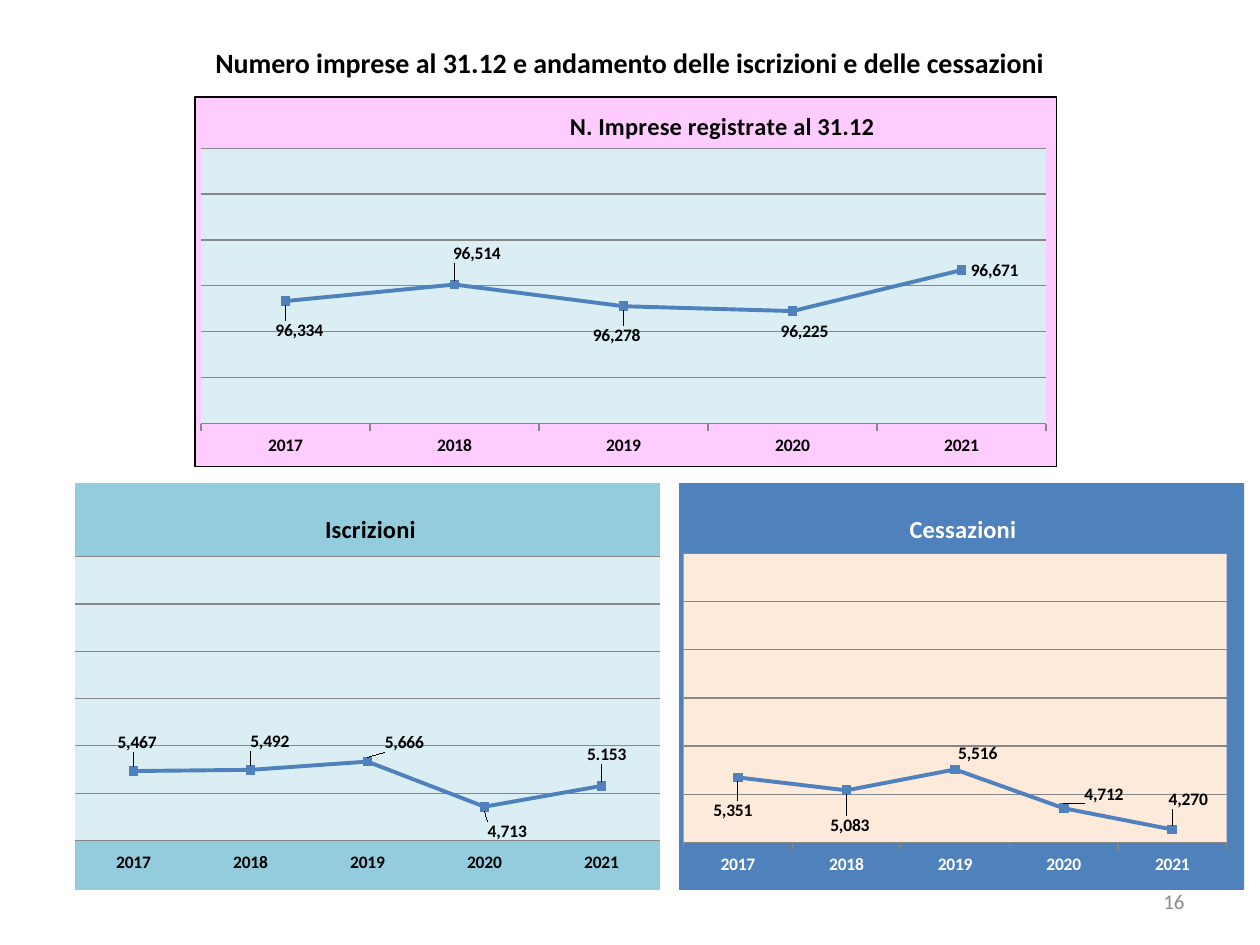
from dataclasses import dataclass

from lxml.etree import SubElement
from pptx import Presentation
from pptx.chart.data import CategoryChartData
from pptx.dml.color import RGBColor
from pptx.enum.chart import XL_CHART_TYPE, XL_LABEL_POSITION, XL_MARKER_STYLE, XL_TICK_LABEL_POSITION, XL_TICK_MARK
from pptx.enum.text import MSO_ANCHOR, PP_ALIGN
from pptx.oxml import parse_xml
from pptx.oxml.ns import nsdecls, qn
from pptx.util import Pt

BLACK = RGBColor(0x00, 0x00, 0x00)
WHITE = RGBColor(0xFF, 0xFF, 0xFF)
GREY = RGBColor(0x8C, 0x8C, 0x8C)
GRID = RGBColor(0x87, 0x87, 0x87)
BLUE = RGBColor(0x4F, 0x81, 0xBD)
PINK = RGBColor(0xFF, 0xCC, 0xFF)
TEAL = RGBColor(0x93, 0xCD, 0xDD)
PALE_BLUE = RGBColor(0xDB, 0xEE, 0xF4)
PEACH = RGBColor(0xFD, 0xEA, 0xDA)

ABOVE, BELOW, RIGHT = XL_LABEL_POSITION.ABOVE, XL_LABEL_POSITION.BELOW, XL_LABEL_POSITION.RIGHT
YEARS = ["2017", "2018", "2019", "2020", "2021"]
NUMBER_FORMAT = "#,##0"


@dataclass
class TrendChart:
    title: str
    series_name: str
    box: tuple
    values: tuple
    scale: tuple
    title_place: tuple
    plot_place: tuple
    labels: tuple
    fill: RGBColor
    plot_fill: RGBColor
    text_color: RGBColor = BLACK
    border: RGBColor | None = None
    tick: XL_TICK_MARK = XL_TICK_MARK.OUTSIDE
    kind: XL_CHART_TYPE = XL_CHART_TYPE.LINE_MARKERS


def manual_layout(**settings):
    layout = parse_xml(f"<c:layout {nsdecls('c')}/>")
    manual = SubElement(layout, qn("c:manualLayout"))
    for name, value in settings.items():
        SubElement(manual, qn(f"c:{name}")).set("val", str(value))
    return layout


def area_style(fill, border=None):
    line = f'<a:solidFill><a:srgbClr val="{border}"/></a:solidFill>' if border else "<a:noFill/>"
    return parse_xml(
        f"<c:spPr {nsdecls('c', 'a')}>"
        f'<a:solidFill><a:srgbClr val="{fill}"/></a:solidFill>'
        f'<a:ln w="{Pt(0.75)}">{line}</a:ln></c:spPr>'
    )


def remove_layout(element):
    for layout in element.findall(qn("c:layout")):
        element.remove(layout)


class SlideBuilder:
    font_name = "Calibri"

    def __init__(self, slide):
        self.slide = slide

    def style_font(self, font, size, color, bold=False):
        font.name = self.font_name
        font.size = Pt(size)
        font.bold = bold
        font.color.rgb = color

    def add_text(self, box, text, size, color, alignment, bold=False):
        shape = self.slide.shapes.add_textbox(*map(Pt, box))
        frame = shape.text_frame
        frame.word_wrap = True
        frame.vertical_anchor = MSO_ANCHOR.MIDDLE
        paragraph = frame.paragraphs[0]
        paragraph.alignment = alignment
        run = paragraph.add_run()
        run.text = text
        self.style_font(run.font, size, color, bold)

    def add_trend(self, trend):
        data = CategoryChartData(number_format=NUMBER_FORMAT)
        data.categories = YEARS
        data.add_series(trend.series_name, trend.values)
        chart = self.slide.shapes.add_chart(trend.kind, *map(Pt, trend.box), data).chart
        self.style_font(chart.font, 10, BLACK)
        chart.has_legend = False
        self.style_title(chart, trend)
        self.style_areas(chart, trend)
        self.style_axes(chart, trend)
        self.style_series(chart.plots[0].series[0], trend)

    def style_title(self, chart, trend):
        chart.has_title = True
        title = chart.chart_title
        title.include_in_layout = False
        run = title.text_frame.paragraphs[0].add_run()
        run.text = trend.title
        self.style_font(run.font, 14, trend.text_color, True)
        element = title._element
        remove_layout(element)
        left, top = trend.title_place
        element.find(qn("c:tx")).addnext(manual_layout(xMode="edge", yMode="edge", x=left, y=top))

    def style_areas(self, chart, trend):
        chart_element = chart._chartSpace.find(qn("c:chart"))
        chart_element.addnext(area_style(trend.fill, trend.border))
        plot_area = chart_element.find(qn("c:plotArea"))
        remove_layout(plot_area)
        left, top, width, height = trend.plot_place
        plot_area.insert(0, manual_layout(
            layoutTarget="inner", xMode="edge", yMode="edge", x=left, y=top, w=width, h=height))
        plot_area.append(area_style(trend.plot_fill))

    def style_axes(self, chart, trend):
        axis = chart.value_axis
        axis.minimum_scale, axis.maximum_scale, axis.major_unit = trend.scale
        axis.has_major_gridlines = True
        axis.visible = False
        years = chart.category_axis
        years.major_tick_mark = trend.tick
        years.tick_label_position = XL_TICK_LABEL_POSITION.LOW
        self.style_font(years.tick_labels.font, 10, trend.text_color, True)
        for line in (axis.major_gridlines.format.line, years.format.line):
            line.color.rgb = GRID
            line.width = Pt(0.75)

    def style_series(self, series, trend):
        series.smooth = False
        series.format.line.color.rgb = BLUE
        series.format.line.width = Pt(2.25)
        series.marker.style = XL_MARKER_STYLE.SQUARE
        series.marker.size = 5
        series.marker.format.fill.solid()
        series.marker.format.fill.fore_color.rgb = BLUE
        series.marker.format.line.color.rgb = BLUE
        labels = series.data_labels
        labels.show_value = True
        labels.number_format = NUMBER_FORMAT
        labels.number_format_is_linked = False
        self.style_font(labels.font, 10, BLACK, True)
        for index, (position, _, _, *custom) in enumerate(trend.labels):
            label = series.points[index].data_label
            self.style_font(label.font, 10, BLACK, True)
            if custom:
                run = label.text_frame.paragraphs[0].add_run()
                run.text = custom[0]
                self.style_font(run.font, 10, BLACK, True)
            label.position = position
        width, height = trend.box[2:]
        for element, (_, right, down, *_) in zip(series._element.iter(qn("c:dLbl")), trend.labels):
            remove_layout(element)
            element.insert(1, manual_layout(x=round(right / width, 3), y=round(down / height, 3)))


TRENDS = [
    TrendChart(
        "N. Imprese registrate al 31.12", "Series 1", (111, 55, 493, 212),
        (96334, 96514, 96278, 96225, 96671), (95000, 98000, 500),
        (0.43, 0.02), (0.007, 0.139, 0.981, 0.745),
        ((BELOW, 8, 6), (ABOVE, 13, -7), (BELOW, -4, 6), (BELOW, 7, 1), (RIGHT, 0, 0)),
        PINK, PALE_BLUE, border=BLACK, kind=XL_CHART_TYPE.LINE_MARKERS_STACKED),
    TrendChart(
        "Iscrizioni", "Iscrizioni", (42.5, 276, 335, 232.5),
        (5467, 5492, 5666, 4713, 5153), (4000, 10000, 1000),
        (0.42, 0.06), (0, 0.181, 1, 0.698),
        ((ABOVE, 2, -5), (ABOVE, 11, -5), (ABOVE, 21, 0), (BELOW, 13, 3), (ABOVE, 3, -7, "5.153")),
        TEAL, PALE_BLUE, tick=XL_TICK_MARK.NONE),
    TrendChart(
        "Cessazioni", "Cessazioni", (388, 276, 323, 232.5),
        (5351, 5083, 5516, 4712, 4270), (4000, 10000, 1000),
        (0.4, 0.06), (0.008, 0.173, 0.961, 0.711),
        ((BELOW, -3, 8), (BELOW, 2, 9), (ABOVE, 13, 2), (ABOVE, 23, 3), (ABOVE, 9, -6)),
        BLUE, PEACH, text_color=WHITE),
]


def main():
    presentation = Presentation()
    presentation.slide_width, presentation.slide_height = Pt(720), Pt(540)
    builder = SlideBuilder(presentation.slides.add_slide(presentation.slide_layouts[6]))
    builder.add_text((36, 22, 648, 27), "Numero imprese al 31.12 e andamento delle iscrizioni e delle cessazioni",
                     16, BLACK, PP_ALIGN.CENTER, True)
    builder.add_text((516, 500.5, 168, 28.5), "16", 12, GREY, PP_ALIGN.RIGHT)
    for trend in TRENDS:
        builder.add_trend(trend)
    presentation.save("out.pptx")


if __name__ == "__main__":
    main()
